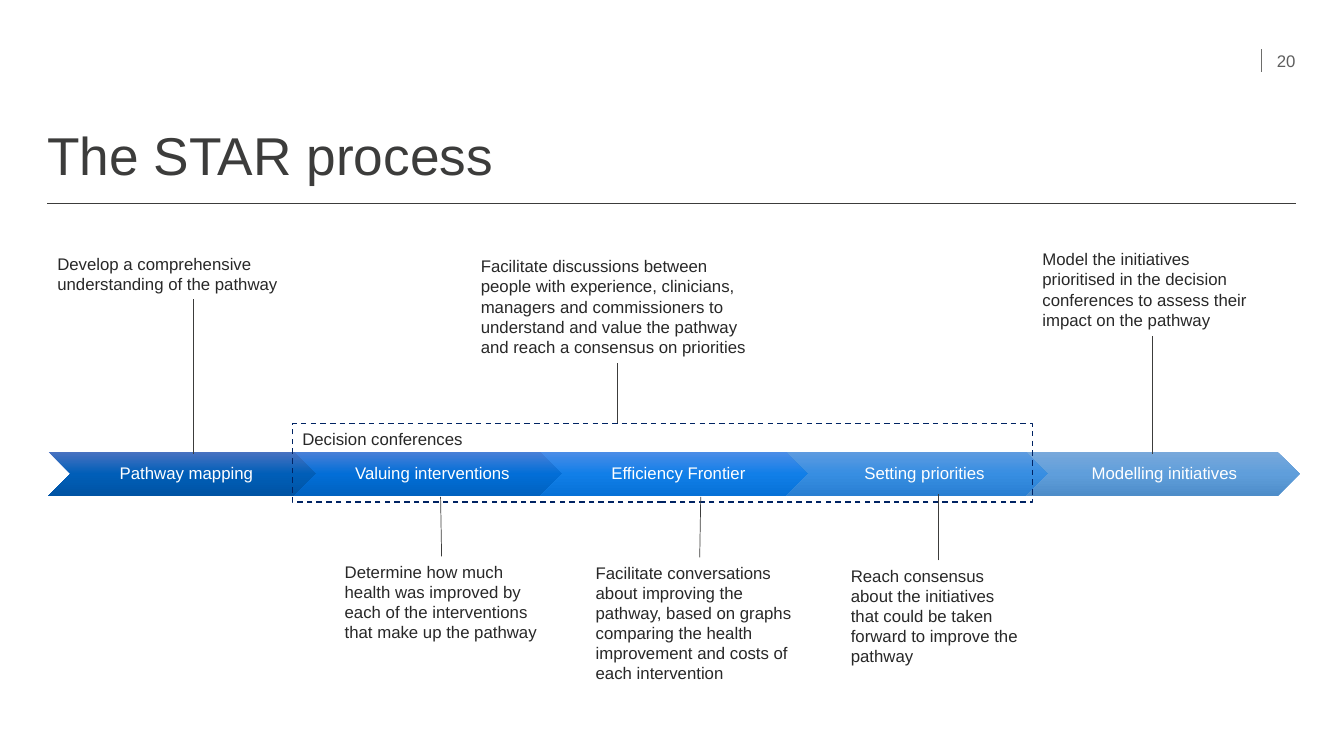
"""Build the STAR process slide: five chevrons with notes above and below."""
from copy import deepcopy
from pptx import Presentation
from pptx import util as u
from pptx.dml.color import RGBColor
from pptx.enum import dml, shapes, text
from pptx.oxml.ns import qn

TITLE, PAGE, FRAME_LABEL = "The STAR process", "20", "Decision conferences"
STEPS = [
    ("Pathway mapping", ("4B73C1", "005EB8", "0054A4")),
    ("Valuing interventions", ("4B80D7", "026ED7", "0062C0")),
    ("Efficiency Frontier", ("4D8DE7", "117FE8", "0671D7")),
    ("Setting priorities", ("5E9BE0", "378EE2", "297FD2")),
    ("Modelling initiatives", ("79A9DB", "5F9EDB", "4E8DC9")),
]
NOTES = [
    ("Facilitate discussions between people with experience, clinicians, managers and "
     "commissioners to understand and value the pathway and reach a consensus on priorities",
     (4.67, 2.49, 2.89, 1.11), (6.12, 4.2, 6.12, 3.6)),
    ("Develop a comprehensive understanding of the pathway",
     (0.47, 2.47, 2.89, 0.5), (1.92, 4.5, 1.92, 2.97)),
    ("Determine how much health was improved by each of the interventions that make up "
     "the pathway", (3.32, 5.52, 2.11, 0.91), (4.38, 5.52, 4.37, 4.93)),
    ("Facilitate conversations about improving the pathway, based on graphs comparing the "
     "health improvement and costs of each intervention",
     (5.81, 5.53, 2.27, 1.31), (6.94, 5.53, 6.95, 4.93)),
    ("Reach consensus about the initiatives that could be taken forward to improve the "
     "pathway", (8.34, 5.56, 1.94, 1.11), (9.31, 5.56, 9.31, 4.9)),
    ("Model the initiatives prioritised in the decision conferences to assess their impact "
     "on the pathway", (10.24, 2.42, 2.39, 0.91), (11.43, 4.5, 11.43, 3.33)),
]
COLORS = {"title": "3C3C3B", "rule": "3C3C3B", "bar": "6D6D6B", "page": "5E5E5E",
          "body": "282828", "step": "FFFFFF", "frame": "002363"}
WIDTH, HEIGHT = 13.33, 7.5
LEFT, RIGHT = 0.47, 12.85
STEP_LEFT, STEP_TOP, STEP_W, STEP_H, PITCH = 0.48, 4.48, 2.71, 0.44, 2.44
LAST_LEFT = 10.18
FRAME = (2.9, 4.2, 7.34, 0.78)
SIDES = ("margin_left", "margin_top", "margin_right", "margin_bottom")


def rgb(name):
    return RGBColor.from_string(COLORS[name])


def inches(values):
    return [u.Inches(v) for v in values]


def write(sp, words, color, size=12, anchor="TOP", align="LEFT", margins=None, spacing=None):
    tf = sp.text_frame
    tf.text = words
    formats = {"word_wrap": True, "auto_size": text.MSO_AUTO_SIZE.NONE,
               "vertical_anchor": getattr(text.MSO_ANCHOR, anchor)}
    formats.update(zip(SIDES, inches(margins or ())))
    for key, value in formats.items():
        setattr(tf, key, value)
    p = tf.paragraphs[0]
    p.alignment, p.line_spacing = getattr(text.PP_ALIGN, align), spacing
    r = p.runs[0]
    for key, value in {"name": "Arial", "size": u.Pt(size), "bold": False}.items():
        setattr(r.font, key, value)
    r.font.color.rgb = rgb(color)


def add_text(s, box, words, color, **formats):
    write(s.shapes.add_textbox(*inches(box)), words, color, **formats)


def add_line(s, ends, color="rule", width=0.5):
    sp = s.shapes.add_connector(shapes.MSO_CONNECTOR.STRAIGHT, *inches(ends))
    sp.line.color.rgb, sp.line.width = rgb(color), u.Pt(width)
    props = sp._element.spPr
    props.append(props.makeelement(qn("a:effectLst"), {}))


def add_step(s, i, words, colors):
    left = LAST_LEFT if i == len(STEPS) - 1 else STEP_LEFT + i * PITCH
    sp = s.shapes.add_shape(shapes.MSO_SHAPE.CHEVRON,
                            *inches((left, STEP_TOP, STEP_W, STEP_H)))
    sp.shadow.inherit = False
    sp.line.fill.background()
    sp.fill.gradient()
    sp.fill.gradient_angle = 270
    gs = sp._element.spPr.find(".//" + qn("a:gs"))
    gs.addnext(deepcopy(gs))
    for stop, position, color in zip(sp.fill.gradient_stops, (0, 0.5, 1), colors):
        stop.position, stop.color.rgb = position, RGBColor.from_string(color)
    notch = STEP_H / 2
    add_text(s, (left + notch, STEP_TOP, STEP_W - 2 * notch, STEP_H), words, "step",
             anchor="MIDDLE", align="CENTER", margins=(0.05, 0.02, 0.02, 0.02), spacing=0.9)


def add_frame(s):
    sp = s.shapes.add_shape(shapes.MSO_SHAPE.RECTANGLE, *inches(FRAME))
    sp.shadow.inherit = False
    sp.fill.background()
    sp.line.color.rgb, sp.line.width = rgb("frame"), u.Pt(1)
    sp.line.dash_style = dml.MSO_LINE.DASH
    add_text(s, (*FRAME[:2], 3.57, 0.3), FRAME_LABEL, "body")


def main():
    prs = Presentation()
    prs.slide_width, prs.slide_height = inches((WIDTH, HEIGHT))
    s = prs.slides.add_slide(prs.slide_layouts[5])
    add_line(s, (LEFT, 2.02, RIGHT, 2.02), width=1)
    add_line(s, (12.51, 0.71, 12.51, 0.49), "bar", 1)
    title = s.shapes.title
    title.left, title.top, title.width, title.height = inches((LEFT, 1.25, RIGHT - LEFT, 0.61))
    write(title, TITLE, "title", size=38, anchor="BOTTOM", margins=(0, 0, 0, 0), spacing=0.9)
    for i, (words, colors) in enumerate(STEPS):
        add_step(s, i, words, colors)
    add_frame(s)
    for words, box, ends in NOTES:
        add_text(s, box, words, "body")
        add_line(s, ends)
    add_text(s, (12.56, 0.49, 0.29, 0.23), PAGE, "page",
             anchor="MIDDLE", align="RIGHT", margins=(0, 0, 0, 0))
    prs.save("out.pptx")


if __name__ == "__main__":
    main()
